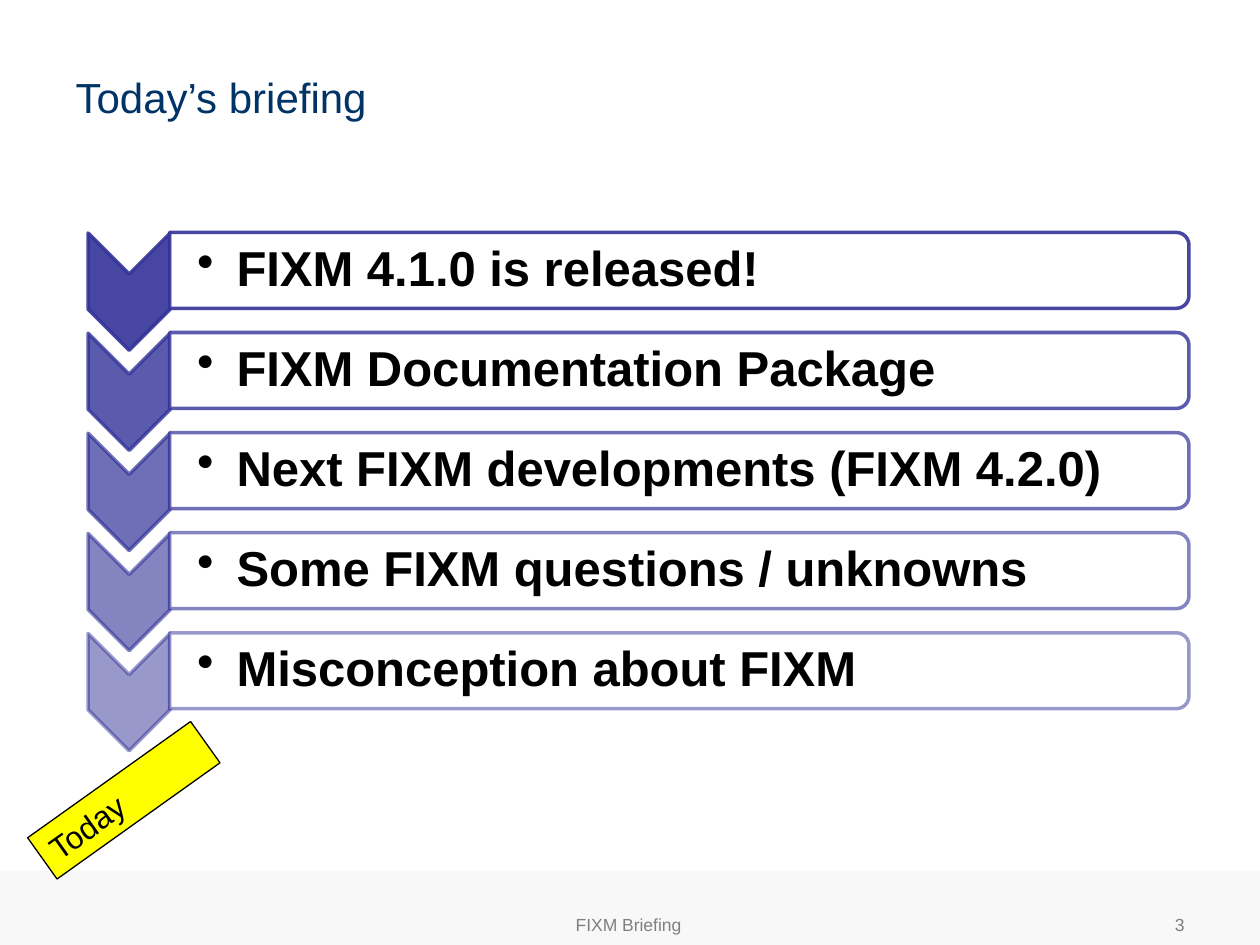
"""Builds the agenda slide of the FIXM briefing."""
from lxml import etree
from pptx import Presentation
from pptx.dml.color import RGBColor
from pptx.enum.shapes import MSO_SHAPE
from pptx.enum.text import MSO_ANCHOR, PP_ALIGN
from pptx.oxml.ns import qn
from pptx.util import Pt

RECT, CHEVRON, BAR = MSO_SHAPE.RECTANGLE, MSO_SHAPE.CHEVRON, MSO_SHAPE.ROUND_2_SAME_RECTANGLE
TOP, MIDDLE = MSO_ANCHOR.TOP, MSO_ANCHOR.MIDDLE
LEFT, CENTER, RIGHT = PP_ALIGN.LEFT, PP_ALIGN.CENTER, PP_ALIGN.RIGHT

TITLE = "Today’s briefing"
TOPICS = [
    "FIXM 4.1.0 is released!",
    "FIXM Documentation Package",
    "Next FIXM developments (FIXM 4.2.0)",
    "Some FIXM questions / unknowns",
    "Misconception about FIXM",
]
FOOTER = [
    ("FIXM Briefing", (195, 517.7, 328.3, 21.6), CENTER),
    ("3", (646.5, 517.7, 37.4, 21.6), RIGHT),
]
STICKER = "Today"
COLORS = {"navy": "003366", "indigo": "333399", "white": "FFFFFF", "black": "000000",
          "yellow": "FFFF00", "gray": "808080", "band": "F8F8F8"}
INSETS = (7.2, 3.6, 7.2, 3.6)
ROW_TOP, ROW_STEP = 154.5, 57.2
BAR_LEFT, BAR_W, BAR_H = 96.9, 582.5, 43.4
CHEVRON_X, CHEVRON_DROP, CHEVRON_W, CHEVRON_H = 73.8, 12.2, 67, 46.9
INDENT = 22.5


def rgb(name):
    return RGBColor.from_string(COLORS[name])


def paint(fill, color, opacity=100):
    fill.solid()
    fill.fore_color.rgb = rgb(color)
    if opacity < 100:
        clr = fill._xPr.find(qn("a:solidFill"))[0]
        etree.SubElement(clr, qn("a:alpha"), val=str(opacity * 1000))


def add_shape(s, kind, box, fill, line=None, width=2, rotation=0, opacity=(100, 100)):
    sp = s.shapes.add_shape(kind, *map(Pt, box))
    sp.shadow.inherit = False
    sp.rotation = rotation
    paint(sp.fill, fill, opacity[0])
    if line:
        paint(sp.line.fill, line, opacity[1])
        sp.line.width = Pt(width)
    else:
        sp.line.fill.background()
    return sp


def add_turned(s, kind, cx, cy, w, h, fill, opacity):
    box = (cx - w / 2, cy - h / 2, w, h)
    return add_shape(s, kind, box, fill, "indigo", rotation=90, opacity=opacity)


def write(sp, text, size, color, align=LEFT, anchor=TOP, bold=False, insets=INSETS, bullet=False):
    tf = sp.text_frame
    tf.text = text
    sides = ("margin_left", "margin_top", "margin_right", "margin_bottom")
    layout = {"word_wrap": True, "vertical_anchor": anchor, **dict(zip(sides, map(Pt, insets)))}
    for name, value in layout.items():
        setattr(tf, name, value)
    p = tf.paragraphs[0]
    p.alignment = align
    if bullet:
        p.line_spacing = 0.9
        pPr = p._p.get_or_add_pPr()
        pPr.set("marL", str(Pt(INDENT)))
        pPr.set("indent", str(-Pt(INDENT)))
        etree.SubElement(pPr, qn("a:buChar"), char="•")
    font = p.runs[0].font
    for name, value in {"name": "Arial", "size": Pt(size), "bold": bold}.items():
        setattr(font, name, value)
    font.color.rgb = rgb(color)


def add_topic(s, i, topic):
    cy = ROW_TOP + i * ROW_STEP
    opacity = 90 - 10 * i
    add_turned(s, CHEVRON, CHEVRON_X, cy + CHEVRON_DROP, CHEVRON_W, CHEVRON_H,
               "indigo", (opacity, opacity))
    add_turned(s, BAR, BAR_LEFT + BAR_W / 2, cy, BAR_H, BAR_W, "white", (90, opacity))
    sp = s.shapes.add_textbox(*map(Pt, (BAR_LEFT, cy - 19.5, BAR_W - 2, 39)))
    write(sp, topic, 28, "black", anchor=MIDDLE, bold=True,
          insets=(15.8, 1.4, 1.4, 1.4), bullet=True)


def main():
    prs = Presentation()
    prs.slide_width, prs.slide_height = Pt(720), Pt(540)
    s = prs.slides.add_slide(prs.slide_layouts[5])
    title = s.shapes.title
    for name, value in zip(("left", "top", "width", "height"), (36, 37.4, 538.6, 61.2)):
        setattr(title, name, Pt(value))
    write(title, TITLE, 24, "navy")

    add_shape(s, RECT, (0, 497.5, 720, 42.5), "band")
    for text, box, align in FOOTER:
        write(s.shapes.add_textbox(*map(Pt, box)), text, 10, "gray", align, MIDDLE)

    for i, topic in enumerate(TOPICS):
        add_topic(s, i, topic)

    sticker = add_shape(s, RECT, (13.6, 442.8, 114.4, 29), "yellow", "black", 0.75, 324.5)
    write(sticker, STICKER, 18, "black")
    prs.save("out.pptx")


if __name__ == "__main__":
    main()
